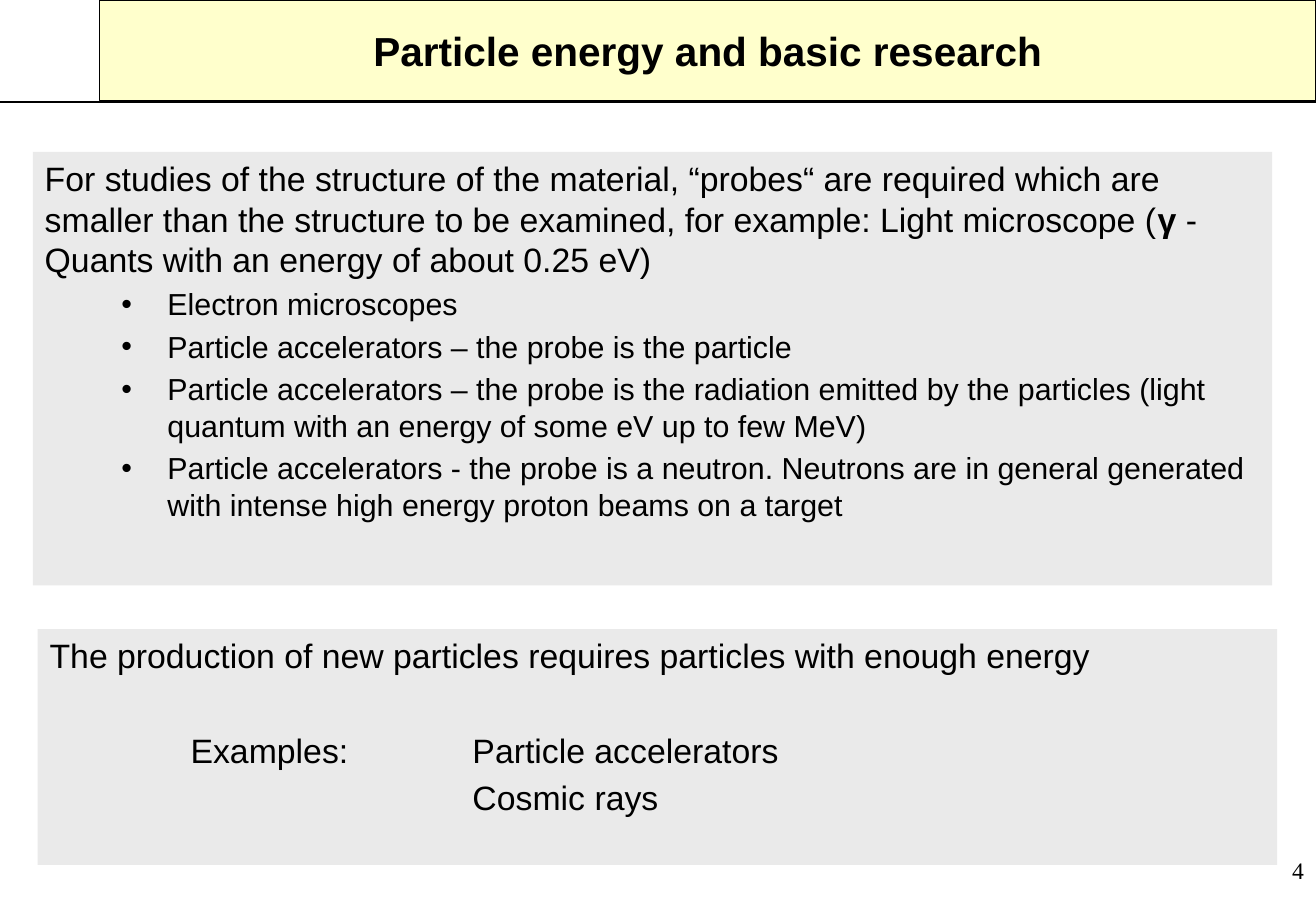
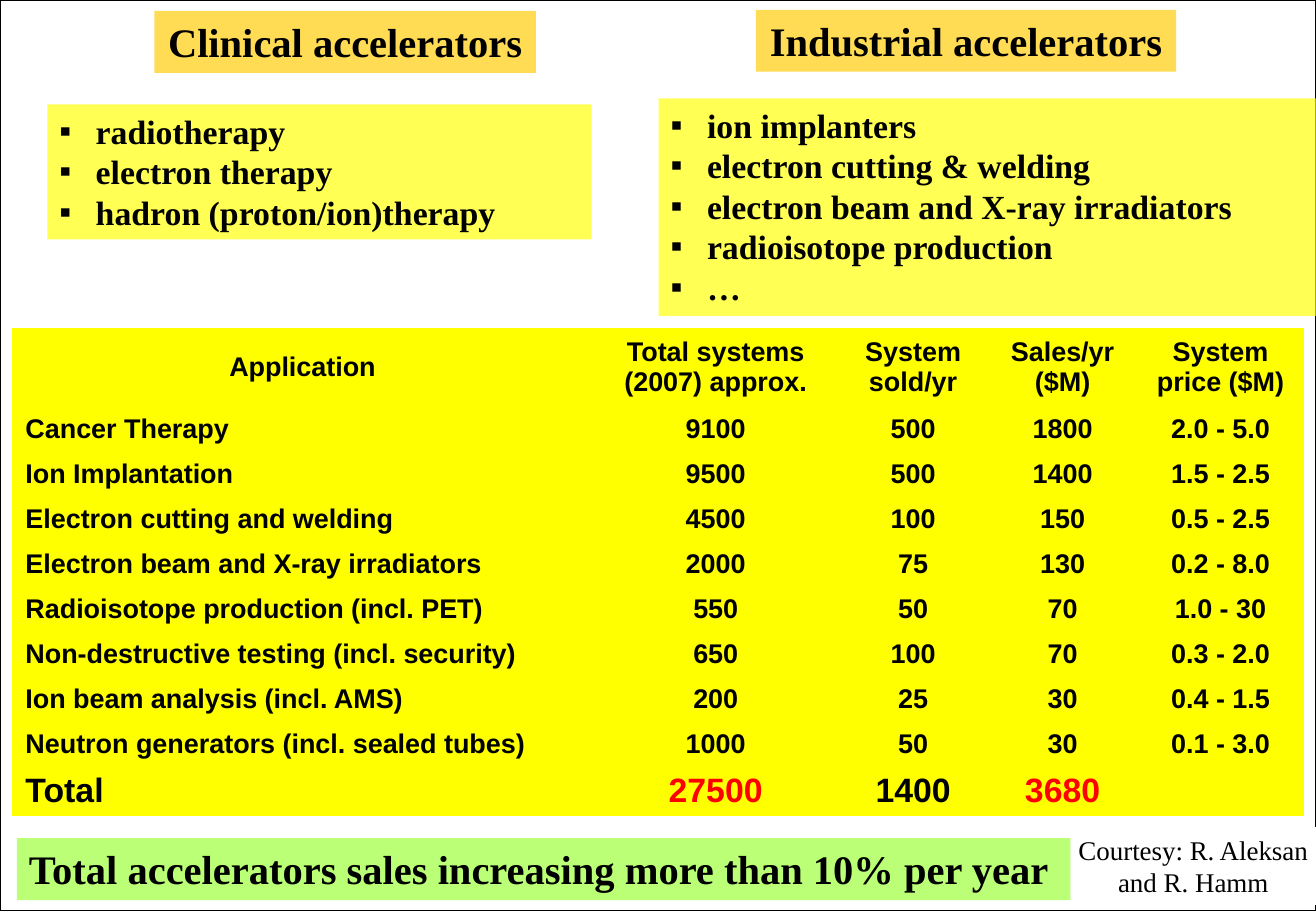
from lxml import etree
from pptx import Presentation
from pptx import util as u
from pptx.dml.color import RGBColor
from pptx.enum import shapes, text
from pptx.oxml.ns import qn

W, H = 10.83, 7.5  # slide size in inches
SANS, SERIF = "Arial", "Times New Roman"
COLORS = {
    "ink": "000000", "paper": "FFFFFF", "band": "FFFFCC", "panel": "EAEAEA",
    "gold": "FFCC00", "lemon": "FFFF00", "lime": "99FF33", "accent": "FF0000",
}
LEFT, CENTER, RIGHT = (text.PP_ALIGN.LEFT, text.PP_ALIGN.CENTER,
                       text.PP_ALIGN.RIGHT)
PLAIN_TABLE = "{2D5ABB26-0587-4C30-8999-92F81FD0307C}"


def rgb(name):
    return RGBColor.from_string(COLORS[name])


def x(percent):
    return u.Inches(W * percent / 100)


def y(percent):
    return u.Inches(H * percent / 100)


def area(left, top, width, height):
    return x(left), y(top), x(width), y(height)


class Deck:
    """Shared style and current slide; places are percent of the slide."""

    def __init__(self):
        self.prs = Presentation()
        self.prs.slide_width, self.prs.slide_height = u.Inches(W), u.Inches(H)
        self.s = None

    def slide(self):
        self.s = self.prs.slides.add_slide(self.prs.slide_layouts[6])

    def box(self, place, fill, alpha=None, line=False):
        sp = self.s.shapes.add_shape(shapes.MSO_SHAPE.RECTANGLE, *area(*place))
        sp.shadow.inherit = False
        sp.fill.solid()
        sp.fill.fore_color.rgb = rgb(fill)
        if alpha:
            clr = sp._element.spPr.find(".//" + qn("a:srgbClr"))
            etree.SubElement(clr, qn("a:alpha"), val=str(alpha * 1000))
        if line:
            sp.line.color.rgb = rgb("ink")
            sp.line.width = u.Pt(0.75)
        else:
            sp.line.fill.background()
        tf = sp.text_frame
        tf.word_wrap = True
        tf.vertical_anchor = text.MSO_ANCHOR.TOP
        return tf

    def rule(self, top):
        cn = self.s.shapes.add_connector(
            shapes.MSO_CONNECTOR.STRAIGHT, 0, y(top), x(100), y(top))
        cn.line.color.rgb = rgb("ink")
        cn.line.width = u.Pt(0.75)
        etree.SubElement(cn._element.spPr, qn("a:effectLst"))

    def run(self, p, words, size, font=SANS, bold=False, color="ink"):
        r = p.add_run()
        r.text = words
        r.font.size, r.font.name, r.font.bold = u.Pt(size), font, bold
        r.font.color.rgb = rgb(color)

    def para(self, tf, words, size, font=SANS, bold=False, align=LEFT,
             before=0, bullet=None, indent=(0, 0), tabs=()):
        """Add a paragraph; words is a string or a list of (words, bold)."""
        p = tf.paragraphs[0]
        if p.runs:
            p = tf.add_paragraph()
        pPr = p._p.get_or_add_pPr()
        if bullet:
            pPr.set("marL", str(u.Inches(indent[0])))
            pPr.set("indent", str(u.Inches(indent[1])))
            etree.SubElement(pPr, qn("a:buFont"), typeface=SANS)
            etree.SubElement(pPr, qn("a:buChar"), char=bullet)
        if tabs:
            stops = etree.SubElement(pPr, qn("a:tabLst"))
            for pos in tabs:
                etree.SubElement(stops, qn("a:tab"), pos=str(u.Inches(pos)),
                                 algn="l")
        p.alignment = align
        p.line_spacing = u.Pt(1.2 * size)
        if before:
            p.space_before = u.Pt(before)
        parts = [(words, bold)] if isinstance(words, str) else words
        for part, heavy in parts:
            self.run(p, part, size, font, heavy)

    def title(self, words):
        self.rule(11.2)
        tf = self.box((7.57, 0, 92.43, 11.07), "band", line=True)
        tf.vertical_anchor = text.MSO_ANCHOR.MIDDLE
        self.para(tf, words, 24, bold=True, align=CENTER)

    def page_number(self, number):
        sp = self.s.shapes.add_textbox(*area(79.22, 93.33, 20.78, 6.67))
        sp.text_frame.word_wrap = True
        self.para(sp.text_frame, number, 14, SERIF, align=RIGHT)

    def label(self, place, words, fill, align=CENTER):
        tf = self.box(place, fill, alpha=67)
        tf.word_wrap = False
        self.para(tf, words, 24, SERIF, True, align)

    def bullet_box(self, place, items):
        tf = self.box(place, "lemon", alpha=67)
        for item in items:
            self.para(tf, item, 20, SERIF, True, bullet="▪",
                      indent=(0.3, -0.3))

    def table(self, left, top, cols, heights, rows):
        gf = self.s.shapes.add_table(
            len(rows), len(cols),
            *area(left, top, sum(cols), sum(heights)))
        next(gf._element.iter(qn("a:tableStyleId"))).text = PLAIN_TABLE
        tbl = gf.table
        for col, width in zip(tbl.columns, cols):
            col.width = x(width)
        last = len(rows) - 1
        for i, row in enumerate(rows):
            tbl.rows[i].height = y(heights[i])
            for j, words in enumerate(row):
                cell = tbl.cell(i, j)
                cell.fill.solid()
                cell.fill.fore_color.rgb = rgb("lemon")
                cell.margin_left = cell.margin_right = u.Inches(0.11)
                cell.vertical_anchor = (text.MSO_ANCHOR.BOTTOM if i
                                        else text.MSO_ANCHOR.MIDDLE)
                p = cell.text_frame.paragraphs[0]
                p.alignment = LEFT if i and j == 0 else CENTER
                if words:
                    accent = i == last and j in (1, 3)
                    self.run(p, words, 20 if i == last else 16, bold=True,
                             color="accent" if accent else "ink")


def research_slide(d):
    d.slide()
    d.title("Particle energy and basic research")
    d.page_number("4")

    # Probes
    tf = d.box((2.49, 16.67, 94.18, 47.6), "panel")
    d.para(tf, [
        ("For studies of the structure of the material, “probes“ are required "
         "which are smaller than the structure to be examined, for example: "
         "Light microscope (", False),
        ("γ ", True),
        ("- Quants with an energy of about 0.25 eV)", False)], 20)
    for probe in (
            "Electron microscopes",
            "Particle accelerators – the probe is the particle",
            "Particle accelerators – the probe is the radiation emitted by "
            "the particles (light quantum with an energy of some eV up to "
            "few MeV)",
            "Particle accelerators - the probe is a neutron. Neutrons are in "
            "general generated with intense high energy proton beams on a "
            "target"):
        d.para(tf, probe, 18, before=3.6, bullet="•", indent=(1.01, -0.38))

    # Production of new particles
    tf = d.box((2.86, 69.07, 94.18, 25.87), "panel")
    d.para(tf, "The production of new particles requires particles with "
               "enough energy", 20)
    tabs = (1.16, 3.48)
    d.para(tf, "\tExamples:\tParticle accelerators", 20, before=32, tabs=tabs)
    d.para(tf, "\t\tCosmic rays", 20, before=4, tabs=tabs)


def market_slide(d):
    d.slide()
    d.box((0, 0, 100, 100), "paper", line=True)

    # Headings and closing line
    d.label((11.73, 1.2, 28.99, 6.8), "Clinical accelerators", "gold")
    d.label((57.43, 1.07, 31.95, 6.8), "Industrial accelerators", "gold")
    d.label((1.29, 92, 80.06, 6.8), "Total accelerators sales increasing "
            "more than 10% per year", "lime", LEFT)

    # Courtesy
    tf = d.box((81.35, 90.8, 18.65, 8.53), "paper")
    tf.margin_left = tf.margin_right = u.Inches(0.04)
    d.para(tf, "Courtesy: R. Aleksan and R. Hamm", 16, SERIF, align=CENTER)

    # Uses
    d.bullet_box((3.6, 11.47, 41.37, 14.8), (
        "radiotherapy", "electron therapy", "hadron (proton/ion)therapy"))
    d.bullet_box((50.05, 10.8, 49.95, 23.87), (
        "ion implanters", "electron cutting & welding",
        "electron beam and X-ray irradiators", "radioisotope production",
        "…"))

    # Sales by application
    d.table(0.92, 36, (44.14, 18.65, 11.36, 11.36, 12.65),
            [8.53] + [4.93] * 8 + [5.6], (
        ("Application", "Total systems (2007) approx.", "System sold/yr",
         "Sales/yr ($M)", "System price ($M)"),
        ("Cancer Therapy", "9100", "500", "1800", "2.0 - 5.0"),
        ("Ion Implantation", "9500", "500", "1400", "1.5 - 2.5"),
        ("Electron cutting and welding", "4500", "100", "150", "0.5 - 2.5"),
        ("Electron beam and X-ray irradiators", "2000", "75", "130",
         "0.2 - 8.0"),
        ("Radioisotope production (incl. PET)", "550", "50", "70",
         "1.0 - 30"),
        ("Non-destructive testing (incl. security)", "650", "100", "70",
         "0.3 - 2.0"),
        ("Ion beam analysis (incl. AMS)", "200", "25", "30", "0.4 - 1.5"),
        ("Neutron generators (incl. sealed tubes)", "1000", "50", "30",
         "0.1 - 3.0"),
        ("Total", "27500", "1400", "3680", "")))


def main():
    d = Deck()
    research_slide(d)
    market_slide(d)
    d.prs.save("out.pptx")


if __name__ == "__main__":
    main()
